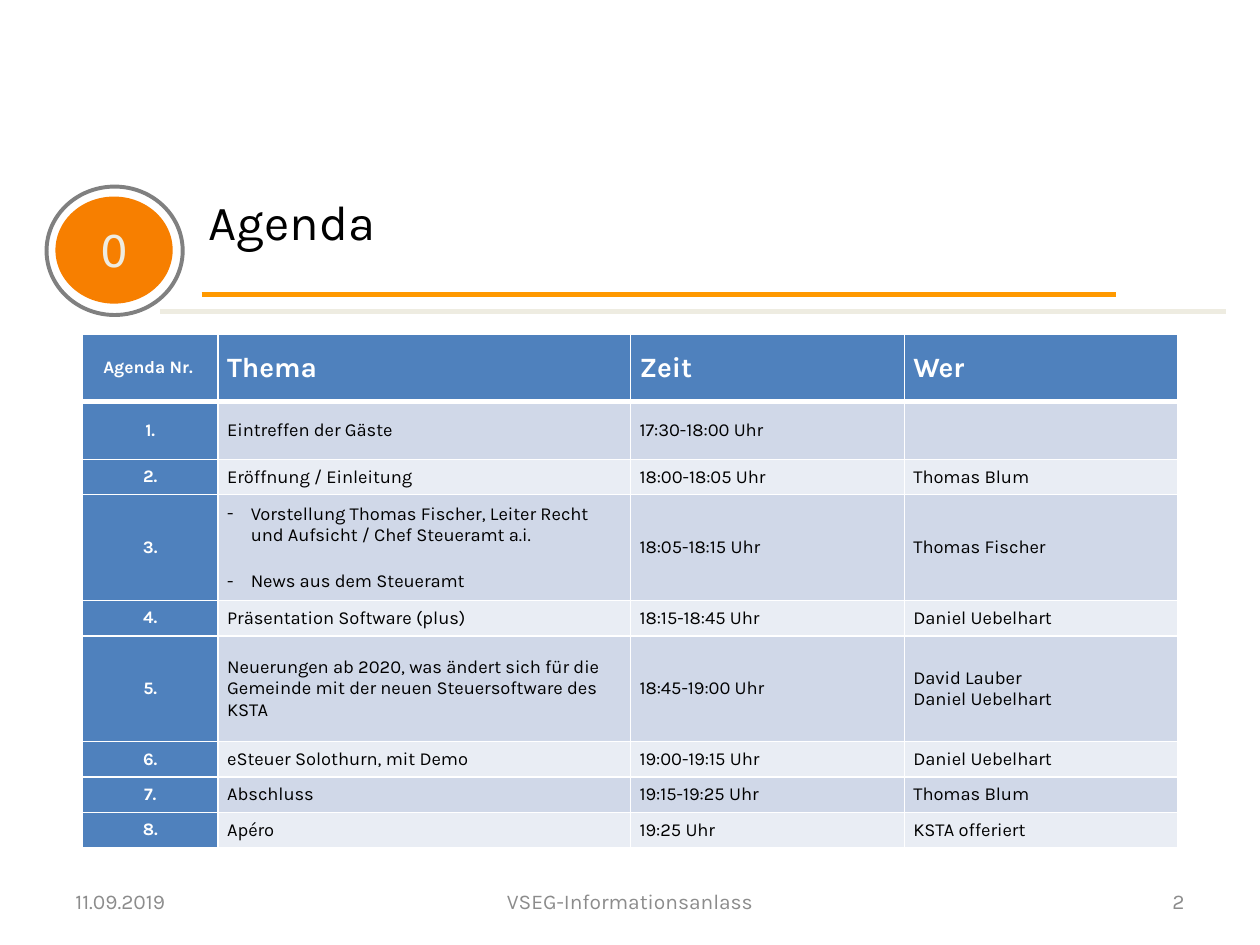
import pptx
import pptx.dml.color
import pptx.enum.shapes
import pptx.enum.text
import pptx.oxml.ns
import pptx.util
from lxml import etree

Pt = pptx.util.Pt
ALIGN = pptx.enum.text.PP_ALIGN
MIDDLE = pptx.enum.text.MSO_ANCHOR.MIDDLE
TOP = pptx.enum.text.MSO_ANCHOR.TOP
qn = pptx.oxml.ns.qn

WHITE, BLACK, GREY = "FFFFFF", "000000", "8C8C8C"
BLUE, BAND_DARK, BAND_LIGHT = "4F81BD", "D0D8E8", "E9EDF4"

COLUMN_WIDTHS = [77.5, 235.7, 156.5, 156.5]
ROW_HEIGHTS = [38.7, 33, 20.2, 60.5, 20.2, 60.5, 20.2, 20.2, 20.2]
HEADINGS = ["Agenda Nr. ", "Thema", "Zeit", "Wer"]
# Topic, time and speakers; a topic given as a list is shown with dashes.
AGENDA = [
    ("Eintreffen der Gäste", "17:30-18:00 Uhr", []),
    ("Eröffnung / Einleitung", "18:00-18:05 Uhr", ["Thomas Blum"]),
    (["Vorstellung Thomas Fischer, Leiter Recht und Aufsicht / Chef Steueramt a.i.",
      "News aus dem Steueramt"], "18:05-18:15 Uhr", ["Thomas Fischer"]),
    ("Präsentation Software (plus)", "18:15-18:45 Uhr", ["Daniel Uebelhart"]),
    ("Neuerungen ab 2020, was ändert sich für die Gemeinde mit der neuen "
     "Steuersoftware des KSTA", "18:45-19:00 Uhr", ["David Lauber", "Daniel Uebelhart"]),
    ("eSteuer Solothurn, mit Demo", "19:00-19:15 Uhr", ["Daniel Uebelhart"]),
    ("Abschluss", "19:15-19:25 Uhr", ["Thomas Blum"]),
    ("Apéro", "19:25 Uhr", ["KSTA offeriert"]),
]


def rgb(value):
    return pptx.dml.color.RGBColor.from_string(value)


def add_span(para, text, size, color, bold=False, font="Karla"):
    span = para.add_run()
    span.text = text
    span.font.name = font
    span.font.size = Pt(size)
    span.font.bold = bold
    span.font.color.rgb = rgb(color)


def add_text(page, place, text, size, color, align=ALIGN.LEFT, anchor=MIDDLE):
    box = page.shapes.add_textbox(*map(Pt, place))
    frame = box.text_frame
    frame.word_wrap = True
    frame.vertical_anchor = anchor
    para = frame.paragraphs[0]
    para.alignment = align
    add_span(para, text, size, color)


def add_rule(page, left, right, y, color):
    rule = page.shapes.add_connector(
        pptx.enum.shapes.MSO_CONNECTOR.STRAIGHT, Pt(left), Pt(y), Pt(right), Pt(y))
    rule.line.color.rgb = rgb(color)
    rule.line.width = Pt(3)
    etree.SubElement(rule._element.spPr, qn("a:effectLst"))


def add_ellipse(page, place):
    ellipse = page.shapes.add_shape(pptx.enum.shapes.MSO_SHAPE.OVAL, *map(Pt, place))
    ellipse.shadow.inherit = False
    return ellipse


def add_badge(page, text):
    """Orange disc with a number inside a grey ring."""
    ring = add_ellipse(page, (26.6, 106.6, 77.8, 73.4))
    ring.fill.background()
    ring.line.color.rgb = rgb("808080")
    ring.line.width = Pt(2.25)
    disc = add_ellipse(page, (31.7, 112.3, 67, 61.2))
    disc.fill.solid()
    disc.fill.fore_color.rgb = rgb("F77F00")
    disc.line.fill.background()
    frame = disc.text_frame
    frame.word_wrap = False
    frame.vertical_anchor = MIDDLE
    frame.paragraphs[0].alignment = ALIGN.CENTER
    add_span(frame.paragraphs[0], text, 25, "EEECE1", font="DejaVu Sans")


def set_borders(cell, widths):
    """White borders; widths maps the sides L, R, T, B to points."""
    properties = cell._tc.get_or_add_tcPr()
    for side, width in widths.items():
        line = etree.SubElement(properties, qn("a:ln" + side), w=str(Pt(width)))
        fill = etree.SubElement(line, qn("a:solidFill"))
        etree.SubElement(fill, qn("a:srgbClr"), val=WHITE)


def set_dash(para):
    properties = para._p.get_or_add_pPr()
    properties.set("marL", str(Pt(13.5)))
    properties.set("indent", str(Pt(-13.5)))
    etree.SubElement(properties, qn("a:buFont"), typeface="Karla")
    etree.SubElement(properties, qn("a:buChar"), char="-")


def fill_cell(cell, lines, size, color, fill, bold=False, align=ALIGN.LEFT,
              dashed=False, top=1, bottom=1):
    set_borders(cell, {"L": 1, "R": 1, "T": top, "B": bottom})
    cell.fill.solid()
    cell.fill.fore_color.rgb = rgb(fill)
    cell.vertical_anchor = MIDDLE
    cell.margin_left = cell.margin_right = Pt(5.2)
    cell.margin_top = cell.margin_bottom = 0
    for index, text in enumerate(lines):
        para = cell.text_frame.add_paragraph() if index else cell.text_frame.paragraphs[0]
        para.alignment = align
        if dashed:
            if index:
                para.space_before = Pt(14)
            set_dash(para)
        add_span(para, text, size, color, bold)


def add_agenda(page):
    table = page.shapes.add_table(
        len(ROW_HEIGHTS), len(COLUMN_WIDTHS), Pt(47.1), Pt(190.8),
        Pt(sum(COLUMN_WIDTHS)), Pt(sum(ROW_HEIGHTS))).table
    table.horz_banding = False
    for column, width in zip(table.columns, COLUMN_WIDTHS):
        column.width = Pt(width)
    for row, height in zip(table.rows, ROW_HEIGHTS):
        row.height = Pt(height)

    for column, heading in enumerate(HEADINGS):
        fill_cell(table.cell(0, column), [heading], 16 if column else 10, WHITE, BLUE,
                  bold=True, align=ALIGN.LEFT if column else ALIGN.CENTER, bottom=3)

    for number, (topic, time, speakers) in enumerate(AGENDA, start=1):
        band = BAND_DARK if number % 2 else BAND_LIGHT
        top = 3 if number == 1 else 1
        dashed = isinstance(topic, list)
        fill_cell(table.cell(number, 0), [f"{number}."], 10, WHITE, BLUE,
                  bold=True, align=ALIGN.CENTER, top=top)
        fill_cell(table.cell(number, 1), topic if dashed else [topic], 10.5, BLACK, band,
                  dashed=dashed, top=top)
        fill_cell(table.cell(number, 2), [time], 10.5, BLACK, band, top=top)
        fill_cell(table.cell(number, 3), speakers, 10.5, BLACK, band, top=top)


def main():
    deck = pptx.Presentation()
    deck.slide_width, deck.slide_height = Pt(720), Pt(540)
    page = deck.slides.add_slide(deck.slide_layouts[6])

    add_text(page, (112.3, 105.8, 571.7, 56.9), "Agenda", 28, BLACK, anchor=TOP)
    add_rule(page, 115.2, 637.9, 168.3, "FF9900")
    add_rule(page, 91.6, 700.4, 178, "EEECE1")
    add_badge(page, "0")
    add_agenda(page)
    add_text(page, (36, 500.5, 168, 28.8), "11.09.2019", 12, GREY)
    add_text(page, (246, 500.5, 228, 28.8), "VSEG-Informationsanlass", 12, GREY, ALIGN.CENTER)
    add_text(page, (516, 500.5, 168, 28.8), "2", 12, GREY, ALIGN.RIGHT)

    deck.save("out.pptx")


if __name__ == "__main__":
    main()
